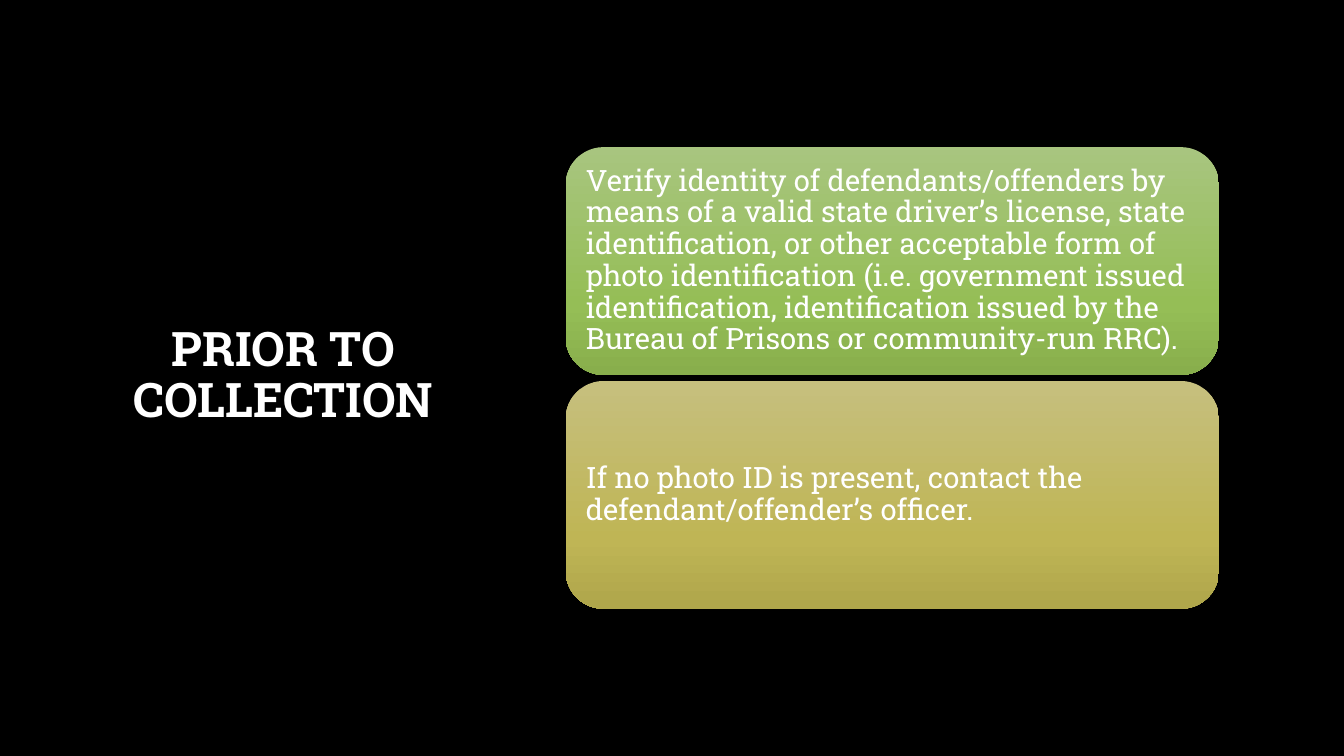
import copy

import pptx
import pptx.dml.color
import pptx.enum.shapes
import pptx.enum.text
import pptx.oxml.ns
import pptx.util
from pptx.util import Inches

FONT = "Roboto Slab"
WHITE = "FFFFFF"
STEPS = [
    ("Verify identity of defendants/offenders by means of a valid state "
     "driver’s license, state identification, or other acceptable form of "
     "photo identification (i.e. government issued identification, "
     "identification issued by the Bureau of Prisons or community-run RRC).",
     ("A8C57F", "95BE56", "88AE4C")),
    ("If no photo ID is present, contact the defendant/offender’s officer.",
     ("C6BF7E", "BFB555", "AFA64B")),
]


def color(hex_string):
    return pptx.dml.color.RGBColor.from_string(hex_string)


def write(shape, text, size, align, bold=False):
    frame = shape.text_frame
    frame.text = text
    frame.word_wrap = True
    frame.auto_size = pptx.enum.text.MSO_AUTO_SIZE.NONE
    frame.vertical_anchor = pptx.enum.text.MSO_ANCHOR.MIDDLE
    para = frame.paragraphs[0]
    para.alignment = align
    para.line_spacing = 0.9
    para.space_before = pptx.util.Pt(0)
    font = para.runs[0].font
    font.name = FONT
    font.size = pptx.util.Pt(size)
    font.bold = bold
    font.color.rgb = color(WHITE)


def fill_downward(shape, colors):
    """Fill with a three-stop gradient running from top to bottom."""
    shape.fill.gradient()
    shape.fill.gradient_angle = 270
    stop_list = shape._element.spPr.find(".//" + pptx.oxml.ns.qn("a:gsLst"))
    stop_list.append(copy.deepcopy(stop_list[-1]))
    for stop, position, shade in zip(shape.fill.gradient_stops, (0, 0.69, 1), colors):
        stop.position = position
        stop.color.rgb = color(shade)


def place_title(slide, left, top, width, height):
    title = slide.shapes.title
    title.left, title.top = Inches(left), Inches(top)
    title.width, title.height = Inches(width), Inches(height)
    write(title, "PRIOR TO COLLECTION", 34, pptx.enum.text.PP_ALIGN.CENTER, bold=True)


def place_steps(slide, left, top, width, height, gap=0.06):
    """Stack the steps as equal rounded cards in the given box."""
    card_height = (height - gap * (len(STEPS) - 1)) / len(STEPS)
    for index, (text, colors) in enumerate(STEPS):
        card = slide.shapes.add_shape(
            pptx.enum.shapes.MSO_SHAPE.ROUNDED_RECTANGLE,
            Inches(left), Inches(top + index * (card_height + gap)),
            Inches(width), Inches(card_height))
        card.shadow.inherit = False
        card.line.fill.background()
        fill_downward(card, colors)
        frame = card.text_frame
        frame.margin_left = frame.margin_right = Inches(0.09)
        frame.margin_top = frame.margin_bottom = Inches(0.09)
        write(card, text, 21, pptx.enum.text.PP_ALIGN.LEFT)


def main():
    deck = pptx.Presentation()
    deck.slide_width, deck.slide_height = Inches(13.33), Inches(7.5)
    slide = deck.slides.add_slide(deck.slide_layouts.get_by_name("Title Only"))
    slide.background.fill.solid()
    slide.background.fill.fore_color.rgb = color("000000")
    place_title(slide, 0.82, 0.67, 3.98, 6.13)
    place_steps(slide, 5.61, 1.46, 6.48, 4.58)
    deck.save("out.pptx")


if __name__ == "__main__":
    main()
